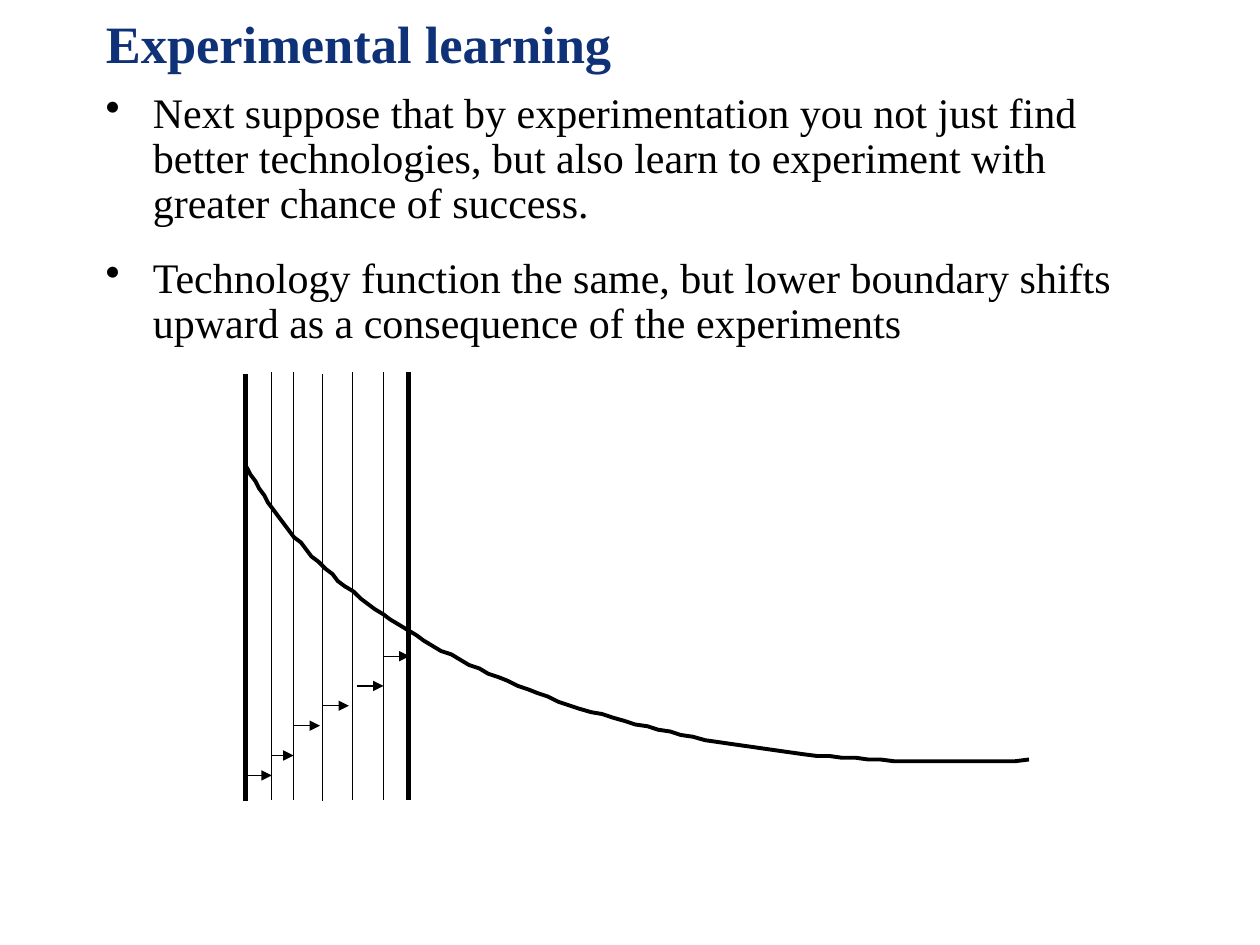
from lxml import etree
from pptx import Presentation
from pptx.dml.color import RGBColor
from pptx.enum.shapes import MSO_CONNECTOR
from pptx.enum.text import MSO_ANCHOR, MSO_AUTO_SIZE, PP_ALIGN
from pptx.oxml.ns import qn
from pptx.util import Pt

STRAIGHT = MSO_CONNECTOR.STRAIGHT
MIDDLE, TOP = MSO_ANCHOR.MIDDLE, MSO_ANCHOR.TOP
NO_FIT = MSO_AUTO_SIZE.NONE
LEFT = PP_ALIGN.LEFT
COLORS = {"title": "0E3178", "ink": "000000"}
FONT = "Times New Roman"
THICK, MID, THIN = 3, 2.25, 0.75


class Deck:
    """Holds the style and the current slide; lengths are in points."""

    def __init__(self, slide):
        self.slide = slide
        self.shapes = slide.shapes

    def color(self, name):
        return RGBColor.from_string(COLORS[name])

    def place(self, shape, box):
        shape.left, shape.top, shape.width, shape.height = map(Pt, box)

    def run(self, para, text, size, color, bold=False):
        run = para.add_run()
        run.text = text
        font = run.font
        font.name, font.size, font.bold = FONT, Pt(size), bold
        font.color.rgb = self.color(color)

    def title(self, text, box):
        shape = self.shapes.title
        self.place(shape, box)
        frame = shape.text_frame
        frame.auto_size = NO_FIT
        frame.vertical_anchor = MIDDLE
        para = frame.paragraphs[0]
        para.alignment = LEFT
        self.run(para, text, 30, "title", True)

    def bullets(self, items, box, indent=27):
        frame = self.shapes.add_textbox(*map(Pt, box)).text_frame
        frame.word_wrap = True
        frame.auto_size = NO_FIT
        frame.vertical_anchor = TOP
        for i, text in enumerate(items):
            para = frame.add_paragraph() if i else frame.paragraphs[0]
            props = para._p.get_or_add_pPr()
            props.set("marL", str(Pt(indent)))
            props.set("indent", str(-Pt(indent)))
            etree.SubElement(props, qn("a:buChar"), char="•")
            para.line_spacing = 0.9
            para.space_before = Pt(4.8 if i else 0)
            para.space_after = Pt(12)
            self.run(para, text, 24, "ink")

    def line(self, start, end, width, arrow=False):
        shape = self.shapes.add_connector(STRAIGHT, *map(Pt, (*start, *end)))
        shape.line.color.rgb = self.color("ink")
        shape.line.width = Pt(width)
        if arrow:
            etree.SubElement(shape.line._ln, qn("a:tailEnd"), type="triangle")
        etree.SubElement(shape._element.spPr, qn("a:effectLst"))

    def curve(self, a, b, c, d, width, steps=80):
        """Draws a cubic Bezier curve as a fine open outline."""
        points = []
        for i in range(steps + 1):
            t = i / steps
            u = 1 - t
            points.append(tuple(
                u**3 * p + 3 * u * u * t * q + 3 * u * t * t * r + t**3 * s
                for p, q, r, s in zip(a, b, c, d)))
        path = self.shapes.build_freeform(*points[0], scale=Pt(1))
        path.add_line_segments(points[1:], close=False)
        shape = path.convert_to_shape()
        shape.shadow.inherit = False
        shape.fill.background()
        shape.line.color.rgb = self.color("ink")
        shape.line.width = Pt(width)


def main():
    prs = Presentation()
    prs.slide_width, prs.slide_height = Pt(720), Pt(540)
    deck = Deck(prs.slides.add_slide(prs.slide_layouts[5]))

    deck.title("Experimental learning", (53.3, 0, 596, 49))
    deck.bullets([
        "Next suppose that by experimentation you not just find better "
        "technologies, but also learn to experiment with greater chance "
        "of success.",
        "Technology function the same, but lower boundary shifts upward "
        "as a consequence of the experiments",
    ], (53.3, 49, 596, 150))

    deck.curve((588.2, 434.2), (378, 445), (198.7, 378), (141.1, 267.1), MID)

    # Boundaries: x, top, width
    high, low, tall = 212.6, 213.6, 244.4
    bounds = [(140.4, low, THICK), (155.3, high, THIN), (167.8, high, THIN),
              (184.3, low, THIN), (201.4, high, THIN), (219.2, high, THIN),
              (233.3, high, THICK)]
    for x, top, width in bounds:
        deck.line((x, top), (x, top + tall), width)

    # Shifts: start, end, height
    shifts = [(140.4, 155.3, 443.1), (155.3, 167.8, 431.7),
              (167.8, 182.9, 414.7), (184.3, 199.4, 403.3),
              (204.2, 219.2, 392), (219.2, 234, 375)]
    for start, end, y in shifts:
        deck.line((start, y), (end, y), THIN, arrow=True)

    prs.save("out.pptx")


if __name__ == "__main__":
    main()
